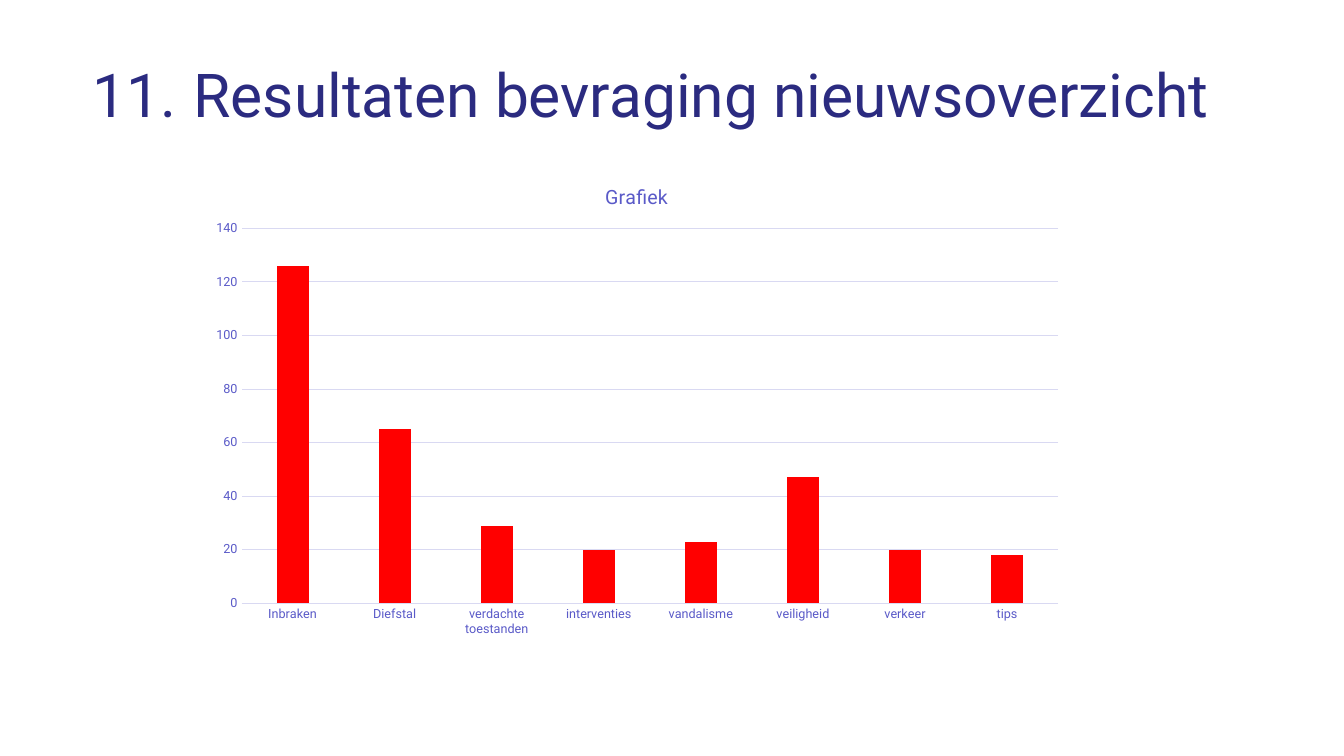
from dataclasses import dataclass

from lxml import etree
from pptx import Presentation
from pptx import util as u
from pptx.chart.data import CategoryChartData
from pptx.dml.color import RGBColor
from pptx.enum import chart as kinds, text
from pptx.oxml.ns import qn


@dataclass(frozen=True)
class Theme:
    face: str = "Roboto"
    navy: RGBColor = RGBColor(0x2B, 0x2B, 0x80)
    violet: RGBColor = RGBColor(0x5A, 0x5A, 0xC8)
    grid: RGBColor = RGBColor(0xD9, 0xD9, 0xF2)
    bar: RGBColor = RGBColor(0xFF, 0x00, 0x00)
    title_size: float = 43.2
    heading_size: float = 14
    chart_size: float = 10
    axis_size: float = 9


THEME = Theme()
RESULTS = {
    "Inbraken": 126,
    "Diefstal": 65,
    "verdachte toestanden": 29,
    "interventies": 20,
    "vandalisme": 23,
    "veiligheid": 47,
    "verkeer": 20,
    "tips": 18,
}


def set_values(target, values):
    for name, value in values.items():
        setattr(target, name, value)


def style_font(font, size, colour):
    set_values(font, {"name": THEME.face, "size": u.Pt(size), "bold": False})
    font.color.rgb = colour


def style_line(line, colour):
    line.color.rgb = colour
    line.width = u.Pt(0.75)


def place_part(part, index, **values):
    """Fix a chart part's place, in fractions of the chart's size."""
    for old in part.findall(qn("c:layout")):
        part.remove(old)
    layout = etree.Element(qn("c:layout"))
    manual = etree.SubElement(layout, qn("c:manualLayout"))
    for name, value in values.items():
        etree.SubElement(manual, qn(f"c:{name}")).set("val", str(value))
    part.insert(index, layout)


def add_title(page, box, number, words):
    title = page.shapes.title
    set_values(title, dict(zip(("left", "top", "width", "height"), box)))
    frame = title.text_frame
    set_values(frame, {
        "margin_left": 0, "margin_top": 0, "margin_right": 0, "margin_bottom": 0,
        "word_wrap": True, "vertical_anchor": text.MSO_ANCHOR.BOTTOM,
        "auto_size": text.MSO_AUTO_SIZE.NONE,
    })
    para = frame.paragraphs[0]
    para.text = words
    set_values(para, {"alignment": text.PP_ALIGN.LEFT, "line_spacing": 0.9,
                      "space_before": u.Pt(0)})

    # Automatic number with a hanging indent
    props = para._p.get_or_add_pPr()
    props.set("marL", str(u.Inches(1)))
    props.set("indent", str(-u.Inches(1)))
    bullet = etree.SubElement(props, qn("a:buAutoNum"))
    bullet.set("type", "arabicPeriod")
    bullet.set("startAt", str(number))
    style_font(para.runs[0].font, THEME.title_size, THEME.navy)


def add_results_chart(page, box, heading, results):
    data = CategoryChartData()
    data.categories = list(results)
    data.add_series("Series 1", list(results.values()))
    chart = page.shapes.add_chart(
        kinds.XL_CHART_TYPE.COLUMN_CLUSTERED, *box, data).chart
    chart.has_legend = False
    style_font(chart.font, THEME.chart_size, THEME.navy)

    # Heading
    chart.has_title = True
    chart.chart_title.include_in_layout = False
    para = chart.chart_title.text_frame.paragraphs[0]
    para.text = heading
    style_font(para.runs[0].font, THEME.heading_size, THEME.violet)
    place_part(chart.chart_title._element, 1,
               xMode="edge", yMode="edge", x=0.46, y=0.04)

    # Columns
    plot = chart.plots[0]
    set_values(plot, {"gap_width": 219, "overlap": -27, "vary_by_categories": False})
    fill = plot.series[0].format.fill
    fill.solid()
    fill.fore_color.rgb = THEME.bar
    place_part(chart._chartSpace.chart.plotArea, 0, layoutTarget="inner",
               xMode="edge", yMode="edge", x=0.05, y=0.14, w=0.93, h=0.77)

    # Axes and grid
    for axis in (chart.category_axis, chart.value_axis):
        set_values(axis, {"major_tick_mark": kinds.XL_TICK_MARK.NONE,
                          "minor_tick_mark": kinds.XL_TICK_MARK.NONE})
        style_font(axis.tick_labels.font, THEME.axis_size, THEME.violet)
    style_line(chart.category_axis.format.line, THEME.grid)
    values = chart.value_axis
    set_values(values, {"minimum_scale": 0, "maximum_scale": 140, "major_unit": 20,
                        "has_major_gridlines": True})
    values.format.line.fill.background()
    style_line(values.major_gridlines.format.line, THEME.grid)


def main():
    deck = Presentation()
    set_values(deck, {"slide_width": u.Inches(13.33), "slide_height": u.Inches(7.5)})
    page = deck.slides.add_slide(deck.slide_layouts[5])
    title_box = [u.Inches(n) for n in (0.92, 0, 11.7, 1.3)]
    chart_box = [u.Inches(n) for n in (1.96, 1.59, 8.71, 4.83)]
    add_title(page, title_box, 11, "Resultaten bevraging nieuwsoverzicht")
    add_results_chart(page, chart_box, "Grafiek", RESULTS)
    deck.save("out.pptx")


if __name__ == "__main__":
    main()
